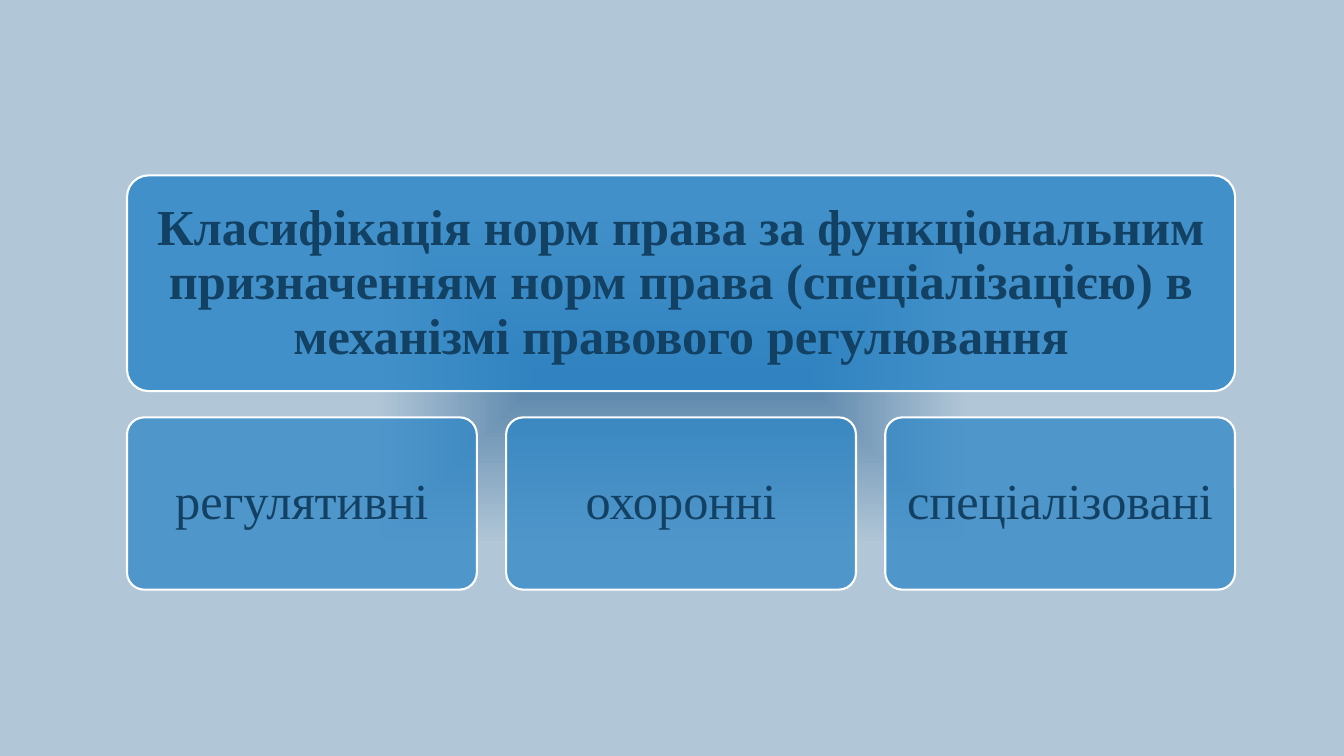
from dataclasses import dataclass

from lxml import etree
from pptx import Presentation
from pptx import util as u
from pptx.dml.color import RGBColor
from pptx.enum import shapes, text
from pptx.oxml import parse_xml
from pptx.oxml.ns import nsdecls, qn


@dataclass(frozen=True)
class Theme:
    font: str = "Times New Roman"
    size: int = 36
    ink: str = "134163"
    fill: str = "2683C6"
    edge: str = "FFFFFF"
    glow: str = "5884AA"
    back: str = "B1C6D7"
    line: float = 1.5
    inset: float = 0.12


@dataclass(frozen=True)
class Grid:
    left: float = 1.26
    width: float = 10.99
    cols: int = 3
    gap: float = 0.29
    rows: tuple = ((1.74, 2.14), (4.14, 1.71))

    def cell(self, row, col=0, span=1):
        wide = (self.width - self.gap * (self.cols - 1)) / self.cols
        left = self.left + col * (wide + self.gap)
        top, high = self.rows[row]
        size = span * wide + (span - 1) * self.gap
        return [u.Inches(n) for n in (left, top, size, high)]


THEME = Theme()
GRID = Grid()
HEAD = ("Класифікація норм права за функціональним "
        "призначенням норм права (спеціалізацією) в "
        "механізмі правового регулювання")
KINDS = ("регулятивні", "охоронні", "спеціалізовані")


def paint(slide):
    slide.background.fill.gradient()
    old = slide._element.xpath(".//p:bgPr/a:gradFill")[0]
    new = parse_xml(
        f'<a:gradFill {nsdecls("a")} rotWithShape="1"><a:gsLst>'
        f'<a:gs pos="0"><a:srgbClr val="{THEME.glow}">'
        '<a:alpha val="80000"/></a:srgbClr></a:gs>'
        f'<a:gs pos="44000"><a:srgbClr val="{THEME.back}"/></a:gs>'
        f'<a:gs pos="100000"><a:srgbClr val="{THEME.back}"/></a:gs>'
        '</a:gsLst><a:path path="shape">'
        '<a:fillToRect l="50000" t="50000" r="50000" b="50000"/>'
        '</a:path></a:gradFill>')
    old.getparent().replace(old, new)


def panel(slide, area, alpha):
    box = slide.shapes.add_shape(shapes.MSO_SHAPE.ROUNDED_RECTANGLE, *area)
    box.adjustments[0] = 0.1
    box.shadow.inherit = False
    box.fill.solid()
    box.fill.fore_color.rgb = RGBColor.from_string(THEME.fill)
    tint = box._element.spPr.find(qn("a:solidFill"))[0]
    etree.SubElement(tint, qn("a:alpha")).set("val", str(alpha * 1000))
    box.line.color.rgb = RGBColor.from_string(THEME.edge)
    box.line.width = u.Pt(THEME.line)
    return box


def write(shape, words, bold=False):
    frame = shape.text_frame
    frame.text = words
    frame.word_wrap = True
    frame.auto_size = text.MSO_AUTO_SIZE.NONE
    frame.vertical_anchor = text.MSO_ANCHOR.MIDDLE
    frame.margin_left = frame.margin_right = u.Inches(THEME.inset)
    frame.margin_top = frame.margin_bottom = u.Inches(THEME.inset)
    para = frame.paragraphs[0]
    para.alignment = text.PP_ALIGN.CENTER
    para.line_spacing = 0.9
    para.font.name = THEME.font
    para.font.size = u.Pt(THEME.size)
    para.font.bold = bold
    para.font.color.rgb = RGBColor.from_string(THEME.ink)


def header(slide, words):
    area = GRID.cell(0, span=GRID.cols)
    box = panel(slide, area, 80)
    title = slide.shapes.title
    title.left, title.top, title.width, title.height = area
    box._element.addnext(title._element)
    write(title, words, bold=True)


def main():
    deck = Presentation()
    deck.slide_width = u.Inches(13.33)
    deck.slide_height = u.Inches(7.5)
    slide = deck.slides.add_slide(deck.slide_layouts.get_by_name("Title Only"))
    paint(slide)
    header(slide, HEAD)
    for col, kind in enumerate(KINDS):
        write(panel(slide, GRID.cell(1, col), 70), kind)
    deck.save("out.pptx")


if __name__ == "__main__":
    main()
